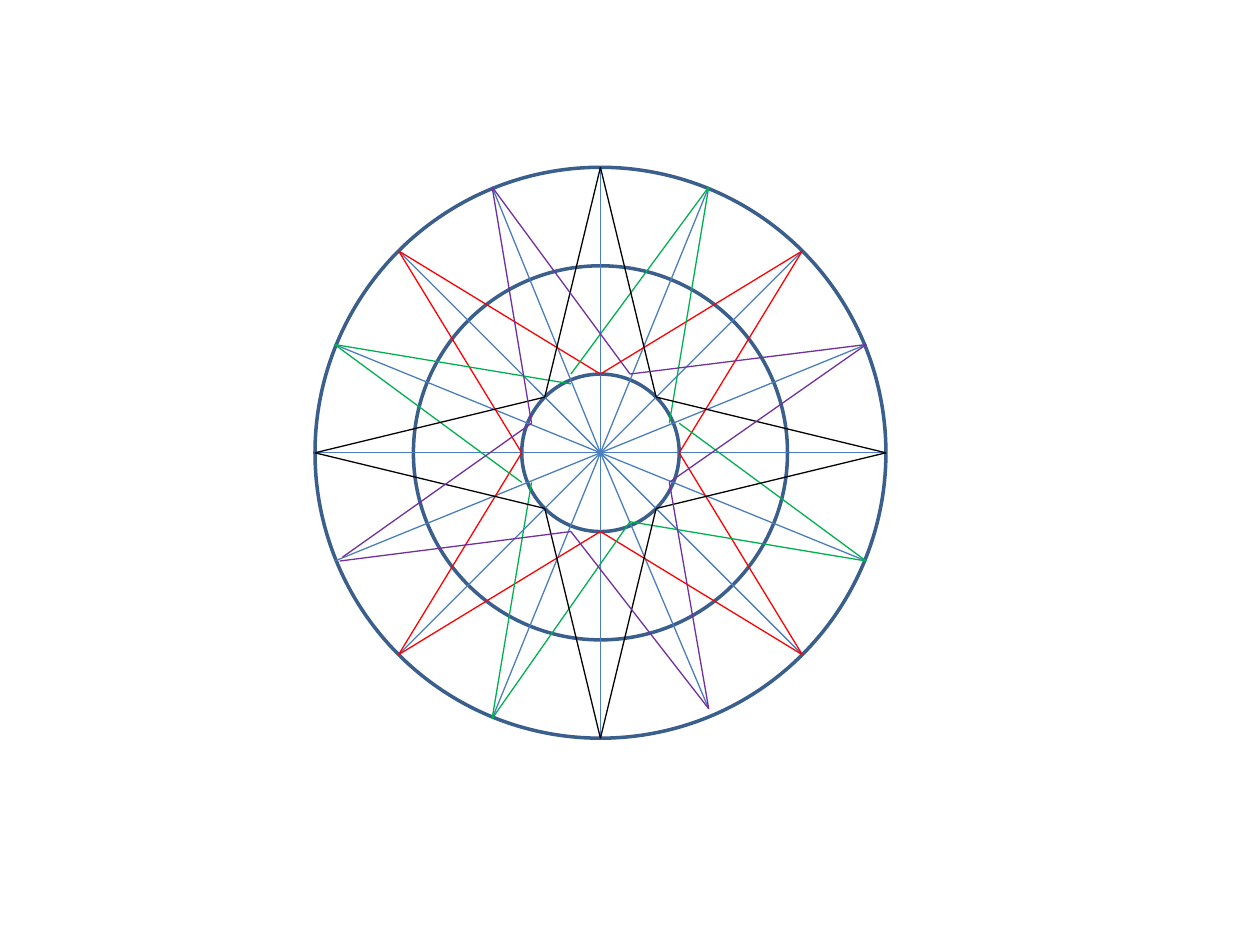
from itertools import pairwise
from math import cos, radians, sin

from lxml.etree import SubElement
from pptx import Presentation
from pptx.dml.color import RGBColor
from pptx.enum.shapes import MSO_CONNECTOR as Connector, MSO_SHAPE as Shape
from pptx.oxml.ns import qn
from pptx.util import Inches, Pt

COLORS = {
    "ring": "3A5F8C",
    "spoke": "4B7EBC",
    "red": "FF0000",
    "green": "00B050",
    "black": "000000",
    "purple": "7030A0",
}
COLUMNS, ROWS = 128, 96
CENTER = (61, 46)
INNER, MIDDLE, OUTER = 8, 19, 29

SPOKE_ENDS = [(11, -27), (27, 11), (27, -11), (11, 26),
              (-11, 27), (-27, 11), (-27, -11), (-11, -27)]
GREEN_PATHS = [
    [(7, -3), (11, -27), (-3, -8)],
    [(-3, -7), (-27, -11), (-8, 3)],
    [(-7, 3), (-11, 27), (3, 7), (27, 11), (8, -3)],
]
PURPLE_PATHS = [
    [(-7, -3), (-11, -27), (3, -8), (27, -11), (7, 3),
     (11, 26), (-3, 8), (-26.5, 11)],
    [(-26.2, 10.6), (-7, -3)],
]


def polar(radius, degrees):
    angle = radians(degrees)
    return radius * cos(angle), radius * sin(angle)


def star(first_radius, second_radius):
    return [polar(second_radius if step % 2 else first_radius, 45 * step)
            for step in range(9)]


class CompassRose:
    def __init__(self, presentation):
        self.slide = presentation.slides.add_slide(presentation.slide_layouts[6])
        self.column = presentation.slide_width / COLUMNS
        self.row = presentation.slide_height / ROWS
        self.ring_width = Pt(2)
        self.line_width = Pt(0.75)

    def place(self, point):
        x, y = point
        return (round((CENTER[0] + x) * self.column),
                round((CENTER[1] + y) * self.row))

    def style_line(self, line, color, width):
        line.color.rgb = RGBColor.from_string(COLORS[color])
        line.width = width

    def ring(self, radius):
        left, top = self.place((-radius, -radius))
        shape = self.slide.shapes.add_shape(
            Shape.OVAL, left, top,
            round(2 * radius * self.column), round(2 * radius * self.row))
        shape.shadow.inherit = False
        shape.fill.background()
        self.style_line(shape.line, "ring", self.ring_width)

    def segment(self, start, end, color):
        connector = self.slide.shapes.add_connector(
            Connector.STRAIGHT, *self.place(start), *self.place(end))
        self.style_line(connector.line, color, self.line_width)
        SubElement(connector._element.spPr, qn("a:effectLst"))

    def path_line(self, points, color):
        for start, end in pairwise(points):
            self.segment(start, end, color)


def main():
    presentation = Presentation()
    presentation.slide_width = Inches(10)
    presentation.slide_height = Inches(7.5)
    rose = CompassRose(presentation)

    for radius in (INNER, MIDDLE, OUTER):
        rose.ring(radius)
    for degrees in (270, 180, 225, 135):
        rose.segment(polar(OUTER, degrees), polar(OUTER, degrees + 180), "spoke")
    for end in SPOKE_ENDS:
        rose.segment((0, 0), end, "spoke")

    rose.path_line(star(INNER, OUTER), "red")
    for points in GREEN_PATHS:
        rose.path_line(points, "green")
    rose.path_line(star(OUTER, INNER), "black")
    for points in PURPLE_PATHS:
        rose.path_line(points, "purple")

    presentation.save("out.pptx")


if __name__ == "__main__":
    main()
